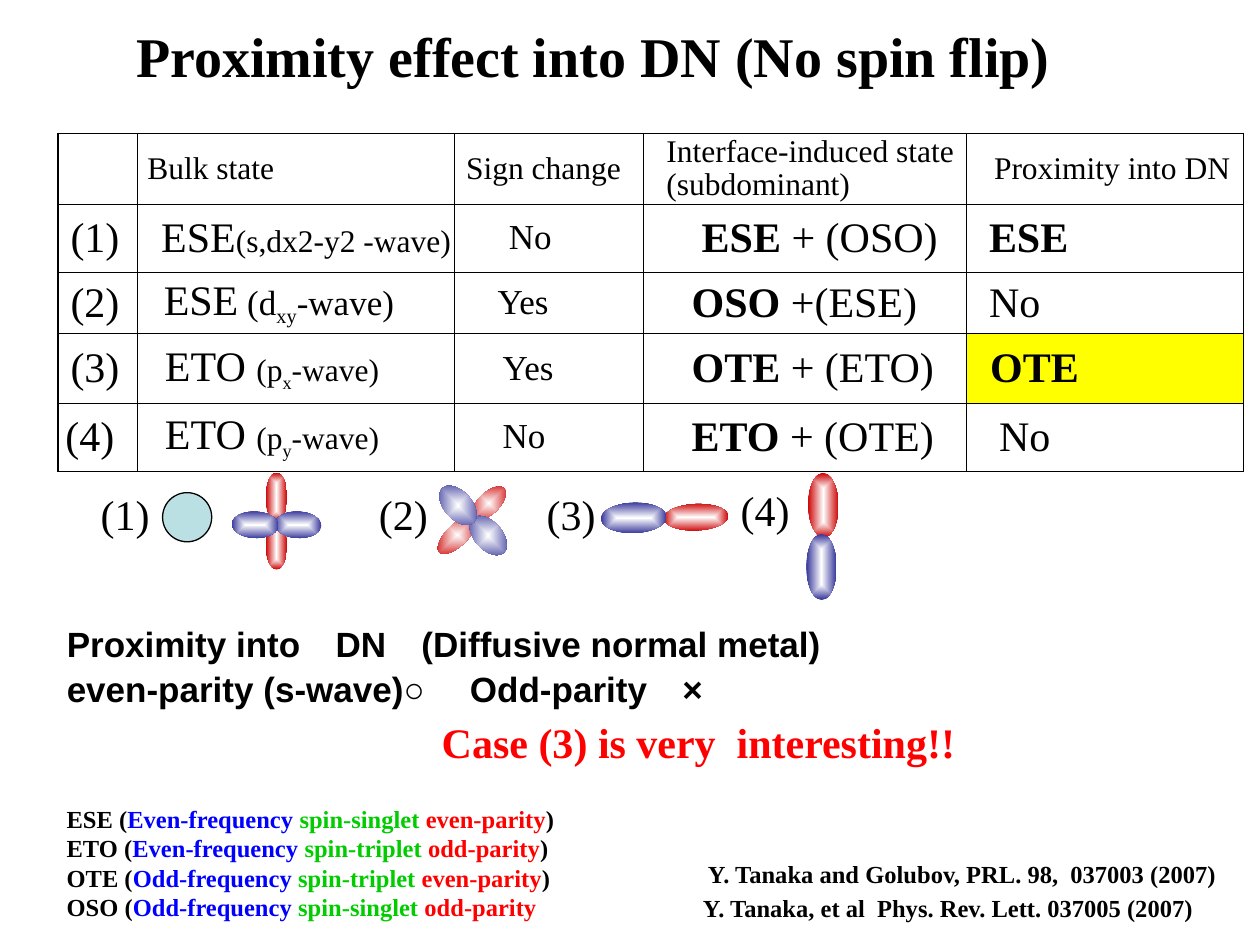
from lxml import etree
from pptx import Presentation
from pptx.dml.color import RGBColor
from pptx.enum.shapes import MSO_SHAPE
from pptx.enum.text import MSO_ANCHOR, MSO_AUTO_SIZE, PP_ALIGN
from pptx.oxml.ns import qn
from pptx.util import Inches, Pt

OVAL = MSO_SHAPE.OVAL
MIDDLE, TOP = MSO_ANCHOR.MIDDLE, MSO_ANCHOR.TOP
LEFT, RIGHT = PP_ALIGN.LEFT, PP_ALIGN.RIGHT
SERIF, SANS = "Times New Roman", "Arial"
COLORS = {
    "black": "000000", "white": "FFFFFF", "yellow": "FFFF00", "red": "FF0000",
    "blue": "0000FF", "green": "00CC00", "sphere": "BBE0E3",
    "plus": "CC0000", "minus": "333399",
}

presentation = Presentation()
presentation.slide_width, presentation.slide_height = Inches(10), Inches(7.5)
UNIT = presentation.slide_width / 100  # grid of 100 columns by 75 rows


def grid(*values):
    return [round(value * UNIT) for value in values]


def write_runs(paragraph, runs, font=SERIF):
    """Each run is (text, size, style, colour); style holds "b" (bold) or "sub"."""
    for text, size, style, color in runs:
        run = paragraph.add_run()
        run.text = text
        run.font.name, run.font.size = font, Pt(size)
        run.font.bold = style == "b"
        run.font.color.rgb = RGBColor.from_string(COLORS[color])
        if style == "sub":
            run.font._element.set("baseline", "-25000")


slide = presentation.slides.add_slide(presentation.slide_layouts[1])

# Title and body
title, body = slide.placeholders
title.left, title.top, title.width, title.height = grid(9.8, 1.2, 76, 6.4)
body.left, body.top, body.width, body.height = grid(4.3, 49.3, 91.4, 9.4)
for placeholder, anchor in ((title, MIDDLE), (body, TOP)):
    placeholder.text_frame.auto_size = MSO_AUTO_SIZE.NONE
    placeholder.text_frame.vertical_anchor = anchor
title_paragraph = title.text_frame.paragraphs[0]
title_paragraph.alignment = LEFT
write_runs(title_paragraph, [("Proximity effect into DN (No spin flip)", 32, "b", "black")])

body.text_frame.text = "Proximity into　DN　(Diffusive normal metal)\neven-parity (s-wave)○ 　Odd-parity　×"
for paragraph in body.text_frame.paragraphs:
    paragraph.line_spacing, paragraph.space_before = 0.9, Pt(4)
    properties = paragraph._p.get_or_add_pPr()
    properties.set("marL", "0")
    properties.set("indent", "0")
    etree.SubElement(properties, qn("a:buNone"))
    for run in paragraph.runs:
        run.font.name, run.font.size, run.font.bold = SANS, Pt(20), True
        run.font.color.rgb = RGBColor.from_string(COLORS["black"])

# Table: each cell is (left inset, runs), each run is (text, size, style)
ROWS = [
    [(0, [("", 18, "")]), (0.8, [("Bulk state", 18, "")]), (0.9, [("Sign change", 18, "")]),
     (1.8, [("Interface-induced state\n(subdominant)", 18, "")]),
     (2.2, [("Proximity into DN", 18, "")])],
    [(1, [("(1)", 24, "")]), (1.9, [("ESE", 24, ""), ("(s,dx2-y2 -wave)", 18, "")]),
     (4.3, [("No", 20, "")]), (4.6, [("ESE", 24, "b"), (" + (OSO)", 24, "")]),
     (1.8, [("ESE", 24, "b")])],
    [(1, [("(2)", 24, "")]),
     (2.1, [("ESE", 24, ""), (" (d", 20, ""), ("xy", 20, "sub"), ("-wave)", 20, "")]),
     (3.4, [("Yes", 20, "")]), (3.8, [("OSO", 24, "b"), (" +(ESE)", 24, "")]),
     (1.8, [("No", 24, "")])],
    [(1, [("(3)", 24, "")]),
     (2.2, [("ETO ", 24, ""), ("(p", 18, ""), ("x", 18, "sub"), ("-wave)", 18, "")]),
     (3.8, [("Yes", 20, "")]), (3.8, [("OTE", 24, "b"), (" + (ETO)", 24, "")]),
     (1.9, [("OTE", 24, "b")])],
    [(0.6, [("(4)", 24, "")]),
     (2.2, [("ETO ", 24, ""), ("(p", 18, ""), ("y", 18, "sub"), ("-wave)", 18, "")]),
     (3.8, [("No", 20, "")]), (3.8, [("ETO", 24, "b"), (" + (OTE)", 24, "")]),
     (2.6, [("No", 24, "")])],
]
HIGHLIGHT = (3, 4)
table = slide.shapes.add_table(5, 5, *grid(4.6, 10.6, 94.1, 26.8)).table
table.first_row = table.horz_banding = False
for column, width in zip(table.columns, grid(6.3, 25.2, 15, 25.6, 22)):
    column.width = width
for row, height in zip(table.rows, grid(5.6, 5.4, 4.9, 5.5, 5.4)):
    row.height = height
for row_index, row in enumerate(ROWS):
    for column_index, (inset, runs) in enumerate(row):
        cell = table.cell(row_index, column_index)
        cell.margin_left = grid(inset)[0]
        cell.margin_right = cell.margin_top = cell.margin_bottom = 0
        cell.vertical_anchor = MIDDLE
        cell_properties = cell._tc.get_or_add_tcPr()
        for side in ("a:lnL", "a:lnR", "a:lnT", "a:lnB"):
            border = etree.SubElement(cell_properties, qn(side), w=str(Pt(0.75)))
            border_fill = etree.SubElement(border, qn("a:solidFill"))
            etree.SubElement(border_fill, qn("a:srgbClr"), val=COLORS["black"])
        cell.fill.solid()
        fill = "yellow" if (row_index, column_index) == HIGHLIGHT else "white"
        cell.fill.fore_color.rgb = RGBColor.from_string(COLORS[fill])
        for text, size, style in runs:
            for line_index, line in enumerate(text.split("\n")):
                if line_index:
                    cell.text_frame.add_paragraph()
                paragraph = cell.text_frame.paragraphs[-1]
                if "\n" in text:
                    paragraph.line_spacing = 0.95
                write_runs(paragraph, [(line, size, style, "black")])

# Orbitals: the s-wave sphere, then lobes as (box, rotation, sign)
sphere = slide.shapes.add_shape(OVAL, *grid(12.9, 39.1, 3.9, 3.9))
sphere.shadow.inherit = False
sphere.fill.solid()
sphere.fill.fore_color.rgb = RGBColor.from_string(COLORS["sphere"])
sphere.line.color.rgb = RGBColor.from_string(COLORS["black"])
sphere.line.width = Pt(0.75)

LOBES = [
    ((20, 38.6, 3.9, 1.7), 270, "plus"), ((20, 42.4, 3.9, 1.7), 270, "plus"),
    ((21.8, 40.6, 3.7, 2.1), 182.4, "minus"), ((18.4, 40.6, 3.7, 2.1), 182.4, "minus"),
    ((37.1, 39.1, 3.4, 1.7), 315.7, "plus"), ((34.3, 41.6, 4, 1.7), 315.7, "plus"),
    ((36.9, 41.4, 3.7, 2.2), 228.1, "minus"), ((34.5, 39, 3.7, 2.2), 228.1, "minus"),
    ((52.7, 40, 5.1, 2.1), 357.6, "plus"), ((47.7, 39.9, 5.2, 2.4), 178.2, "minus"),
    ((62.8, 38.9, 5.1, 2.4), 269.2, "plus"), ((62.6, 43.8, 5.2, 2.4), 89.8, "minus"),
]
for box, rotation, sign in LOBES:
    lobe = slide.shapes.add_shape(OVAL, *grid(*box))
    lobe.rotation = rotation
    lobe.shadow.inherit = False
    lobe.line.fill.background()
    lobe.fill.gradient()
    for stop, color in zip(lobe.fill.gradient_stops, ("white", sign)):
        stop.color.rgb = RGBColor.from_string(COLORS[color])
    gradient = lobe._element.spPr.find(qn("a:gradFill"))
    gradient.remove(gradient.find(qn("a:lin")))
    radial = etree.SubElement(gradient, qn("a:path"))
    radial.set("path", "shape")
    etree.SubElement(radial, qn("a:fillToRect"), l="50000", t="50000", r="50000", b="50000")

# Text boxes: (box, alignment, paragraphs)
PAIRINGS = [
    ("ESE", "Even", "singlet", "even", ")"), ("ETO", "Even", "triplet", "odd", ")"),
    ("OTE", "Odd", "triplet", "even", ")"), ("OSO", "Odd", "singlet", "odd", ""),
]
legend = [
    [(f"{name} (", 14, "b", "black"), (f"{frequency}-frequency ", 14, "b", "blue"),
     (f"spin-{spin} ", 14, "b", "green"), (f"{parity}-parity", 14, "b", "red"),
     (closing, 14, "b", "black")]
    for name, frequency, spin, parity, closing in PAIRINGS
]
text_boxes = [
    ((left, top, 7, 5), LEFT, [[(f"({number})", 24, "", "black")]])
    for number, (left, top) in enumerate([(7, 38.3), (29.1, 38.3), (42.4, 38.3), (57.8, 38)], 1)
]
text_boxes += [
    ((33.6, 56.4, 43.2, 5), RIGHT, [[("Case (3) is very  interesting!!", 24, "b", "red")]]),
    ((4.3, 63.3, 53.5, 10.4), LEFT, legend),
    ((55.2, 67.7, 44.5, 3.4), LEFT,
     [[("Y. Tanaka and Golubov, PRL. 98,  037003 (2007)", 14, "b", "black")]]),
    ((54.8, 70.4, 44.5, 3.3), LEFT,
     [[("Y. Tanaka, et al  Phys. Rev. Lett. 037005 (2007)", 14, "b", "black")]]),
]
for box, alignment, paragraphs in text_boxes:
    text_frame = slide.shapes.add_textbox(*grid(*box)).text_frame
    text_frame.word_wrap = True
    for index, runs in enumerate(paragraphs):
        paragraph = text_frame.add_paragraph() if index else text_frame.paragraphs[0]
        paragraph.alignment = alignment
        write_runs(paragraph, runs)

presentation.save("out.pptx")
